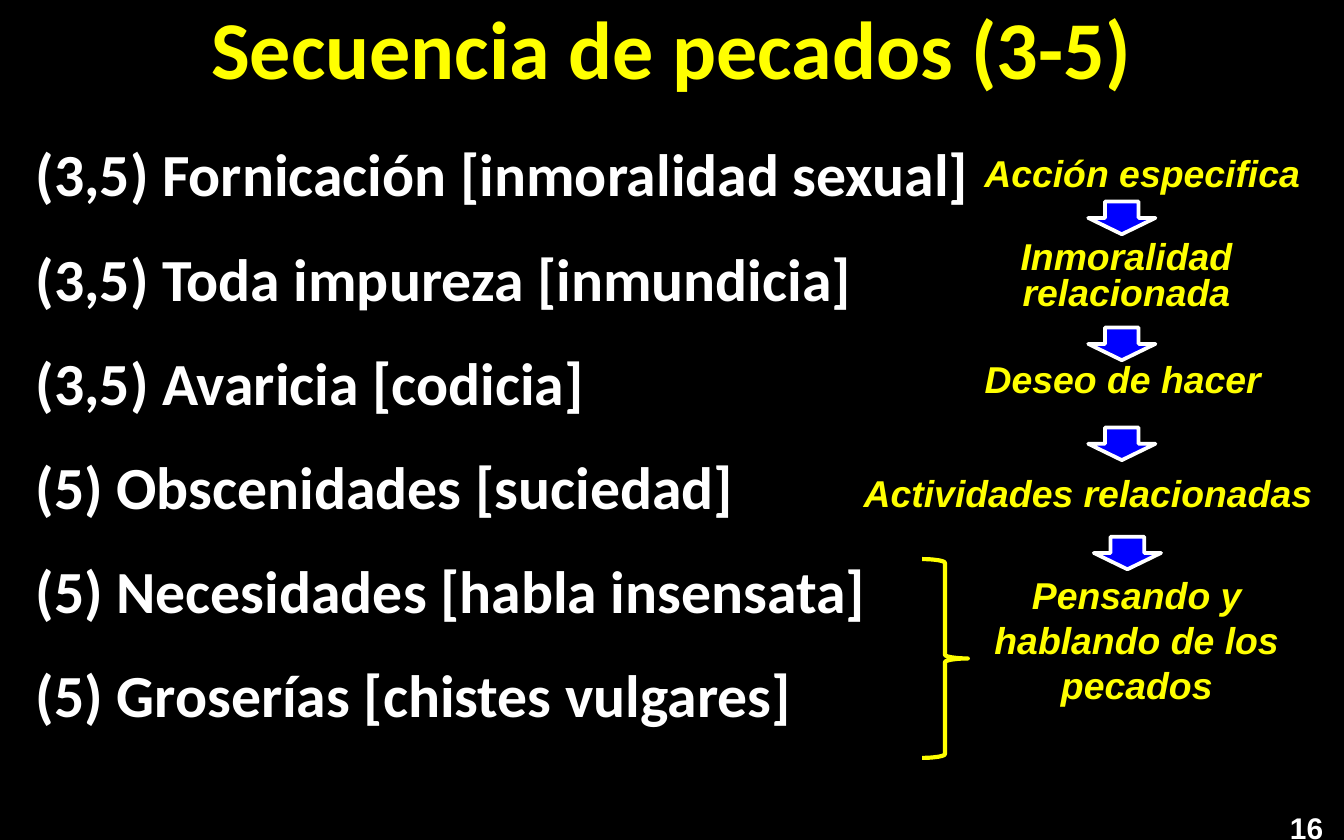
from dataclasses import dataclass, field

from pptx import Presentation
from pptx.dml.color import RGBColor
from pptx.enum.shapes import MSO_SHAPE
from pptx.enum.text import MSO_ANCHOR, PP_ALIGN
from pptx.slide import Slide
from pptx.util import Pt


@dataclass(frozen=True)
class Theme:
    black: RGBColor = RGBColor(0x00, 0x00, 0x00)
    white: RGBColor = RGBColor(0xFF, 0xFF, 0xFF)
    yellow: RGBColor = RGBColor(0xFF, 0xFF, 0x00)
    blue: RGBColor = RGBColor(0x00, 0x00, 0xFF)
    heading_font: str = "Calibri"
    label_font: str = "Arial"
    title_size: float = 44
    sin_size: float = 32
    stage_size: float = 20
    number_size: float = 16
    arrow_line: float = 2
    brace_line: float = 2.25


@dataclass(frozen=True)
class Box:
    left: float
    top: float
    width: float
    height: float

    def emu(self) -> tuple[Pt, ...]:
        return tuple(Pt(n) for n in (self.left, self.top, self.width, self.height))


@dataclass(frozen=True)
class Words:
    box: Box
    lines: tuple[str, ...]
    font: dict
    paragraph: dict = field(default_factory=dict)
    anchor: MSO_ANCHOR = MSO_ANCHOR.TOP


@dataclass(frozen=True)
class Outline:
    kind: MSO_SHAPE
    box: Box
    line: RGBColor
    weight: float
    fill: RGBColor | None = None


THEME = Theme()
CENTERED = {"alignment": PP_ALIGN.CENTER}
TITLE_FONT = {"name": THEME.heading_font, "size": Pt(THEME.title_size), "bold": True}
SIN_FONT = TITLE_FONT | {"size": Pt(THEME.sin_size)}
NUMBER_FONT = {"name": THEME.label_font, "size": Pt(THEME.number_size), "bold": True}
STAGE_FONT = NUMBER_FONT | {"size": Pt(THEME.stage_size), "italic": True}

SINS = (
    "(3,5) Fornicación [inmoralidad sexual]",
    "(3,5) Toda impureza [inmundicia]",
    "(3,5) Avaricia [codicia]",
    "(5) Obscenidades [suciedad]",
    "(5) Necesidades [habla insensata]",
    "(5) Groserías [chistes vulgares]",
)
STAGES = (
    ("Acción especifica", Box(516, 77, 192, 32), 1.0),
    ("Inmoralidad relacionada", Box(504.5, 126, 198, 46), 0.8),
    ("Deseo de hacer", Box(502.5, 187.5, 198, 32), 1.0),
    ("Actividades relacionadas", Box(450, 248.5, 266, 32), 1.0),
    ("Pensando y hablando de los pecados", Box(510, 303, 198, 80), 1.0),
)
ARROW_SPOTS = ((583, 108), (583, 175.5), (583, 229), (586, 287.5))


def add_words(slide: Slide, words: Words, color: RGBColor) -> None:
    """Place one text box with one paragraph per line."""
    frame = slide.shapes.add_textbox(*words.box.emu()).text_frame
    frame.word_wrap = True
    frame.vertical_anchor = words.anchor
    frame.text = "\n".join(words.lines)
    for paragraph in frame.paragraphs:
        for name, value in words.paragraph.items():
            setattr(paragraph, name, value)
        for name, value in words.font.items():
            setattr(paragraph.runs[0].font, name, value)
        paragraph.runs[0].font.color.rgb = color


def add_outline(slide: Slide, outline: Outline) -> None:
    """Place one preset shape with its line and optional fill."""
    shape = slide.shapes.add_shape(outline.kind, *outline.box.emu())
    shape.shadow.inherit = False
    shape.line.color.rgb = outline.line
    shape.line.width = Pt(outline.weight)
    if outline.fill is None:
        shape.fill.background()
    else:
        shape.fill.solid()
        shape.fill.fore_color.rgb = outline.fill


def main() -> None:
    """Build the slide and save it."""
    deck = Presentation()
    deck.slide_width, deck.slide_height = Pt(720), Pt(450)
    slide = deck.slides.add_slide(deck.slide_layouts[6])
    slide.background.fill.solid()
    slide.background.fill.fore_color.rgb = THEME.black

    title = Words(Box(54, 5, 612, 40), ("Secuencia de pecados (3-5)",),
                  TITLE_FONT, CENTERED, MSO_ANCHOR.MIDDLE)
    sins = Words(Box(12, 70, 678, 355), SINS, SIN_FONT, {"space_after": Pt(17.4)})
    number = Words(Box(684, 430, 36, 20), ("16",), NUMBER_FONT)
    add_words(slide, title, THEME.yellow)
    add_words(slide, sins, THEME.white)
    add_words(slide, number, THEME.white)

    for stage, box, spacing in STAGES:
        layout = CENTERED | {"line_spacing": spacing}
        add_words(slide, Words(box, (stage,), STAGE_FONT, layout), THEME.yellow)
    for left, top in ARROW_SPOTS:
        add_outline(slide, Outline(MSO_SHAPE.DOWN_ARROW, Box(left, top, 36, 17.5),
                                   THEME.white, THEME.arrow_line, THEME.blue))
    add_outline(slide, Outline(MSO_SHAPE.RIGHT_BRACE, Box(494, 299.5, 24.5, 106.5),
                               THEME.yellow, THEME.brace_line))
    deck.save("out.pptx")


if __name__ == "__main__":
    main()
